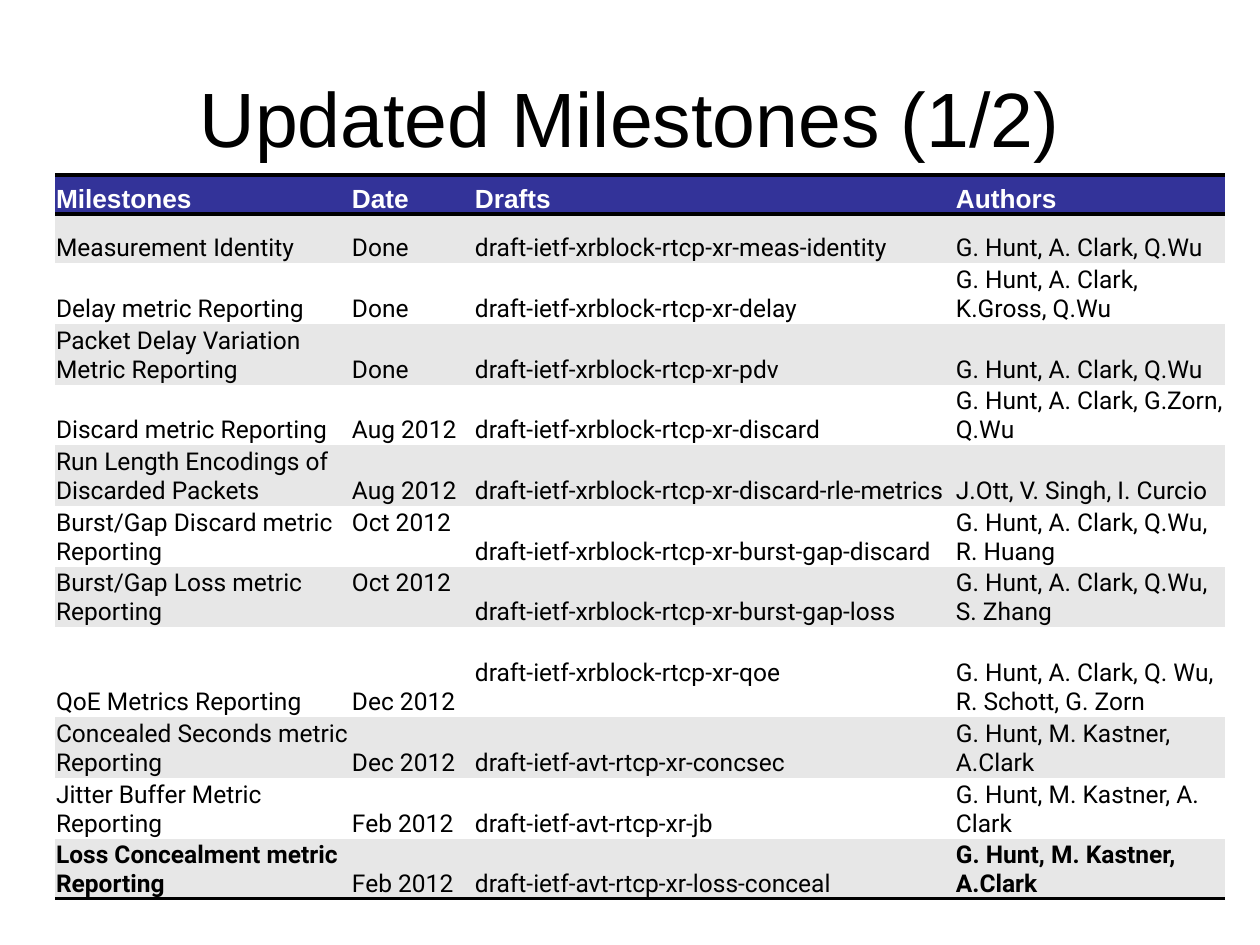
from pptx import Presentation
from pptx.dml.color import RGBColor
from pptx.enum.text import MSO_ANCHOR, PP_ALIGN
from pptx.oxml import parse_xml
from pptx.oxml.ns import nsdecls, qn
from pptx.util import Pt

PX = 914400 / 126
COLORS = {"ink": "000000", "head": "333399", "pale": "E7E7E7", "white": "FFFFFF"}


def px(n):
    return round(n * PX)


def write(frame, text, size=14, font="Roboto", color="ink", bold=False, align=PP_ALIGN.LEFT):
    frame.word_wrap = True
    para = frame.paragraphs[0]
    para.alignment = align
    run = para.add_run()
    run.text = text
    run.font.size = Pt(size)
    run.font.name = font
    run.font.bold = bold
    run.font.color.rgb = RGBColor.from_string(COLORS[color])


deck = Presentation()
deck.slide_width, deck.slide_height = px(1260), px(945)
slide = deck.slides.add_slide(deck.slide_layouts[6])

title = slide.shapes.add_textbox(px(63), px(38), px(1134), px(158)).text_frame
title.vertical_anchor = MSO_ANCHOR.MIDDLE
write(title, "Updated Milestones (1/2)", size=44, font="Arial", align=PP_ALIGN.CENTER)

rows = [
    ("Milestones", "Date", "Drafts", "Authors"),
    ("Measurement Identity", "Done", "draft-ietf-xrblock-rtcp-xr-meas-identity", "G. Hunt, A. Clark, Q.Wu"),
    ("Delay metric Reporting", "Done", "draft-ietf-xrblock-rtcp-xr-delay", "G. Hunt, A. Clark, K.Gross, Q.Wu"),
    ("Packet Delay Variation Metric Reporting", "Done", "draft-ietf-xrblock-rtcp-xr-pdv", "G. Hunt, A. Clark, Q.Wu"),
    ("Discard metric Reporting", "Aug 2012", "draft-ietf-xrblock-rtcp-xr-discard", "G. Hunt, A. Clark, G.Zorn, Q.Wu"),
    ("Run Length Encodings of Discarded Packets", "Aug 2012", "draft-ietf-xrblock-rtcp-xr-discard-rle-metrics", "J.Ott, V. Singh, I. Curcio"),
    ("Burst/Gap Discard metric Reporting", "Oct 2012", "draft-ietf-xrblock-rtcp-xr-burst-gap-discard", "G. Hunt, A. Clark, Q.Wu, R. Huang"),
    ("Burst/Gap Loss metric Reporting", "Oct 2012", "draft-ietf-xrblock-rtcp-xr-burst-gap-loss", "G. Hunt, A. Clark, Q.Wu, S. Zhang"),
    ("QoE Metrics Reporting", "Dec 2012", "draft-ietf-xrblock-rtcp-xr-qoe", "G. Hunt, A. Clark, Q. Wu, R. Schott, G. Zorn"),
    ("Concealed Seconds metric Reporting", "Dec 2012", "draft-ietf-avt-rtcp-xr-concsec", "G. Hunt, M. Kastner, A.Clark"),
    ("Jitter Buffer Metric Reporting", "Feb 2012", "draft-ietf-avt-rtcp-xr-jb", "G. Hunt, M. Kastner, A. Clark"),
    ("Loss Concealment metric Reporting", "Feb 2012", "draft-ietf-avt-rtcp-xr-loss-conceal", "G. Hunt, M. Kastner, A.Clark"),
]
widths = [296, 123, 481, 270]
edges = [175, 214, 263, 324, 385, 445, 506, 567, 627, 717, 778, 839, 899]
raised = {(6, 1), (7, 1), (8, 2)}
strong = {(11, 0), (11, 3)}
rules = {0: ["lnT", "lnB"], 11: ["lnB"]}

frame = slide.shapes.add_table(
    len(rows), len(widths), px(55), px(edges[0]), px(sum(widths)), px(edges[-1] - edges[0])
)
for style in frame.element.iter(qn("a:tableStyleId")):
    style.text = "{2D5ABB26-0587-4C30-8999-92F81FD0307C}"
table = frame.table
table.horz_banding = False
for col, width in zip(table.columns, widths):
    col.width = px(width)

for r, row in enumerate(rows):
    table.rows[r].height = px(edges[r + 1] - edges[r])
    fill = "head" if r == 0 else "pale" if r % 2 else "white"
    for c, text in enumerate(row):
        cell = table.cell(r, c)
        cell.vertical_anchor = MSO_ANCHOR.BOTTOM
        cell.margin_left = cell.margin_right = cell.margin_top = px(1)
        cell.margin_bottom = px(29 if (r, c) in raised else 0)
        cell.fill.solid()
        cell.fill.fore_color.rgb = RGBColor.from_string(COLORS[fill])
        if r == 0:
            write(cell.text_frame, text, size=15, font="Arial", color="white", bold=True)
        else:
            write(cell.text_frame, text, bold=(r, c) in strong)
        for i, side in enumerate(rules.get(r, [])):
            line = parse_xml(
                f'<a:{side} {nsdecls("a")} w="{Pt(2)}"><a:solidFill>'
                f'<a:srgbClr val="{COLORS["ink"]}"/></a:solidFill></a:{side}>'
            )
            cell._tc.get_or_add_tcPr().insert(i, line)

deck.save("out.pptx")
